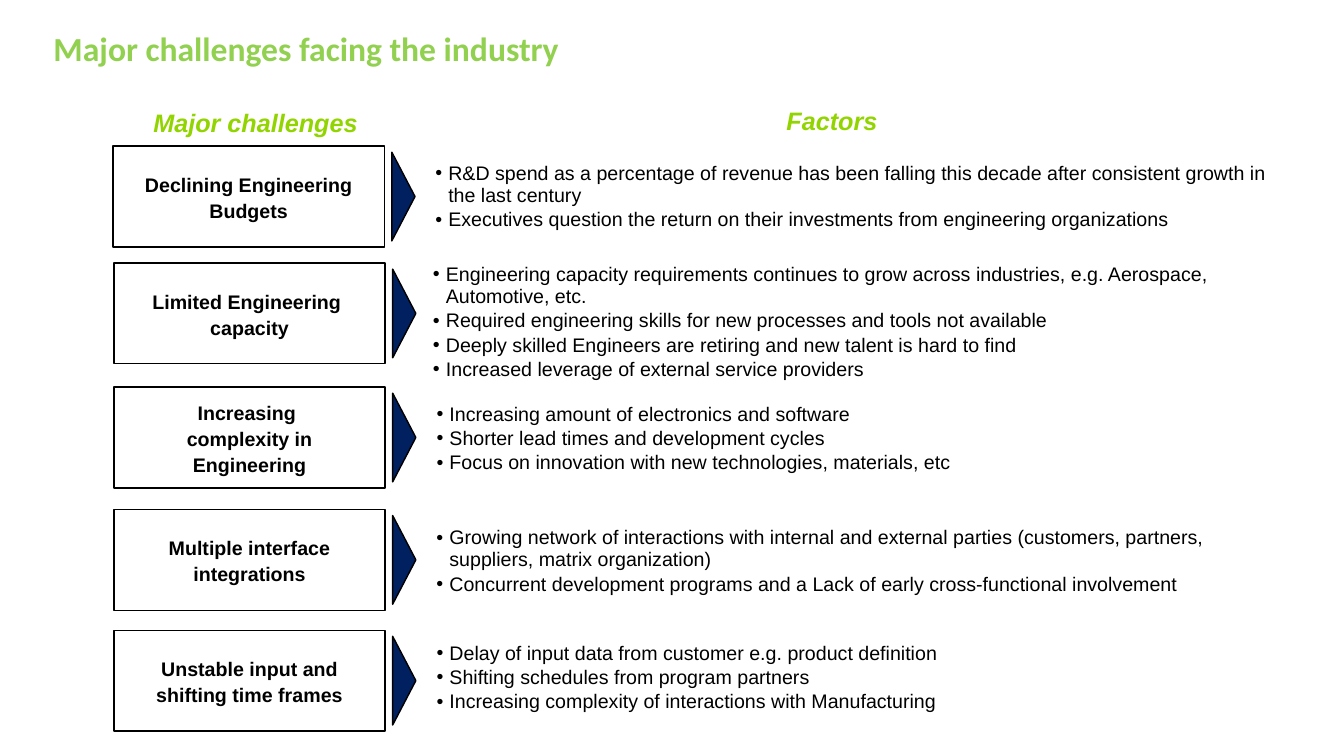
from dataclasses import dataclass

from lxml import etree
from pptx import Presentation
from pptx.dml.color import RGBColor
from pptx.enum.shapes import MSO_SHAPE
from pptx.enum.text import MSO_ANCHOR, MSO_AUTO_SIZE, PP_ALIGN
from pptx.oxml.ns import qn
from pptx.util import Pt

RECTANGLE = MSO_SHAPE.RECTANGLE
TRIANGLE = MSO_SHAPE.ISOSCELES_TRIANGLE
TOP, MIDDLE = MSO_ANCHOR.TOP, MSO_ANCHOR.MIDDLE
LEFT, CENTER = PP_ALIGN.LEFT, PP_ALIGN.CENTER
NO_AUTOSIZE = MSO_AUTO_SIZE.NONE


@dataclass(frozen=True)
class Theme:
    title_color: RGBColor = RGBColor(0x92, 0xD0, 0x50)
    heading_color: RGBColor = RGBColor(0x92, 0xD4, 0x00)
    arrow_color: RGBColor = RGBColor(0x00, 0x20, 0x60)
    black: RGBColor = RGBColor(0, 0, 0)
    white: RGBColor = RGBColor(0xFF, 0xFF, 0xFF)
    title_font: str = "Calibri"
    body_font: str = "Arial"
    title_size: int = 24
    heading_size: int = 18
    body_size: int = 14


THEME = Theme()
BOX_WIDTH, BOX_HEIGHT = 193.68, 72
ARROW_WIDTH, ARROW_HEIGHT = 63.36, 16.56
ARROW_OFFSET = 175.68
BULLET_INDENT = 9.2

CHALLENGES = [
    ("Declining Engineering Budgets", (80.8, 104.4), (311, 87.8, 600, 105.8), MIDDLE, [
        "R&D spend as a percentage of revenue has been falling this decade "
        "after consistent growth in the last century",
        "Executives question the return on their investments from engineering organizations",
    ]),
    ("Limited Engineering \vcapacity", (81.4, 187.9), (309.3, 177.1, 625, 105.8), MIDDLE, [
        "Engineering capacity requirements continues to grow across industries, "
        "e.g. Aerospace, Automotive, etc.",
        "Required engineering skills for new processes and tools not available",
        "Deeply skilled Engineers are retiring and new talent is hard to find",
        "Increased leverage of external service providers",
    ]),
    ("Increasing \vcomplexity in\vEngineering", (81.4, 276.5), (311.8, 288, 600, 72), TOP, [
        "Increasing amount of electronics and software",
        "Shorter lead times and development cycles",
        "Focus on innovation with new technologies, materials, etc",
    ]),
    ("Multiple interface\vintegrations", (81.4, 363.9), (311.8, 376.2, 587.5, 81.4), TOP, [
        "Growing network of interactions with internal and external parties "
        "(customers, partners, suppliers, matrix organization)",
        "Concurrent development programs and a Lack of early cross-functional involvement",
    ]),
    ("Unstable input and\vshifting time frames", (81.4, 450.2), (311.8, 458.8, 600, 54.7), TOP, [
        "Delay of input data from customer e.g. product definition",
        "Shifting schedules from program partners",
        "Increasing complexity of interactions with Manufacturing",
    ]),
]


def set_frame(text_frame, anchor, horizontal=0, vertical=0):
    text_frame.word_wrap = True
    text_frame.auto_size = NO_AUTOSIZE
    text_frame.vertical_anchor = anchor
    text_frame.margin_left = text_frame.margin_right = Pt(horizontal)
    text_frame.margin_top = text_frame.margin_bottom = Pt(vertical)


def style_paragraph(paragraph, alignment, spacing, size, color,
                    bold=False, italic=False, name=THEME.body_font):
    paragraph.alignment = alignment
    paragraph.line_spacing = spacing
    for run in paragraph.runs:
        font = run.font
        font.name, font.size, font.color.rgb = name, Pt(size), color
        font.bold, font.italic = bold, italic


def add_bullet(paragraph):
    properties = paragraph._p.get_or_add_pPr()
    properties.set("marL", str(Pt(BULLET_INDENT)))
    properties.set("indent", str(-Pt(BULLET_INDENT)))
    etree.SubElement(properties, qn("a:buFont"), typeface=THEME.body_font)
    etree.SubElement(properties, qn("a:buChar"), char="•")


def set_title(slide, text):
    title = slide.shapes.title
    title.left, title.top, title.width, title.height = Pt(38.2), Pt(23), Pt(883.4), Pt(36.7)
    title.text_frame.text = text
    set_frame(title.text_frame, TOP)
    style_paragraph(title.text_frame.paragraphs[0], LEFT, 0.9, THEME.title_size,
                    THEME.title_color, bold=True, name=THEME.title_font)


def add_text_box(slide, bounds, anchor):
    text_frame = slide.shapes.add_textbox(*map(Pt, bounds)).text_frame
    set_frame(text_frame, anchor)
    return text_frame


def add_heading(slide, text, bounds):
    text_frame = add_text_box(slide, bounds, TOP)
    text_frame.text = text
    style_paragraph(text_frame.paragraphs[0], CENTER, 1.1, THEME.heading_size,
                    THEME.heading_color, bold=True, italic=True)


def add_outlined_shape(slide, kind, bounds, fill):
    shape = slide.shapes.add_shape(kind, *map(Pt, bounds))
    shape.shadow.inherit = False
    shape.fill.solid()
    shape.fill.fore_color.rgb = fill
    shape.line.color.rgb = THEME.black
    shape.line.width = Pt(1)
    return shape


def add_challenge(slide, text, left, top):
    box = add_outlined_shape(slide, RECTANGLE, (left, top, BOX_WIDTH, BOX_HEIGHT), THEME.white)
    box.text_frame.text = text
    set_frame(box.text_frame, MIDDLE, 7.2, 3.6)
    style_paragraph(box.text_frame.paragraphs[0], CENTER, 1.1, THEME.body_size,
                    THEME.black, bold=True)
    arrow_top = top + (BOX_HEIGHT - ARROW_HEIGHT) / 2
    arrow = add_outlined_shape(slide, TRIANGLE,
                               (left + ARROW_OFFSET, arrow_top, ARROW_WIDTH, ARROW_HEIGHT),
                               THEME.arrow_color)
    arrow.rotation = 90


def add_factors(slide, factors, bounds, anchor):
    text_frame = add_text_box(slide, bounds, anchor)
    text_frame.text = "\n".join(factors)
    for index, paragraph in enumerate(text_frame.paragraphs):
        add_bullet(paragraph)
        style_paragraph(paragraph, LEFT, 0.95, THEME.body_size, THEME.black)
        paragraph.space_before = Pt(1.4 if index else 0)


def main():
    presentation = Presentation()
    presentation.slide_width, presentation.slide_height = Pt(960), Pt(540)
    slide = presentation.slides.add_slide(presentation.slide_layouts.get_by_name("Title Only"))
    set_title(slide, "Major challenges facing the industry")
    add_heading(slide, "Major challenges", (81.4, 74.2, 202.3, 22.3))
    add_heading(slide, "Factors", (375.8, 72.7, 437, 22.3))
    for challenge, position, bounds, anchor, factors in CHALLENGES:
        add_challenge(slide, challenge, *position)
        add_factors(slide, factors, bounds, anchor)
    presentation.save("out.pptx")


if __name__ == "__main__":
    main()
